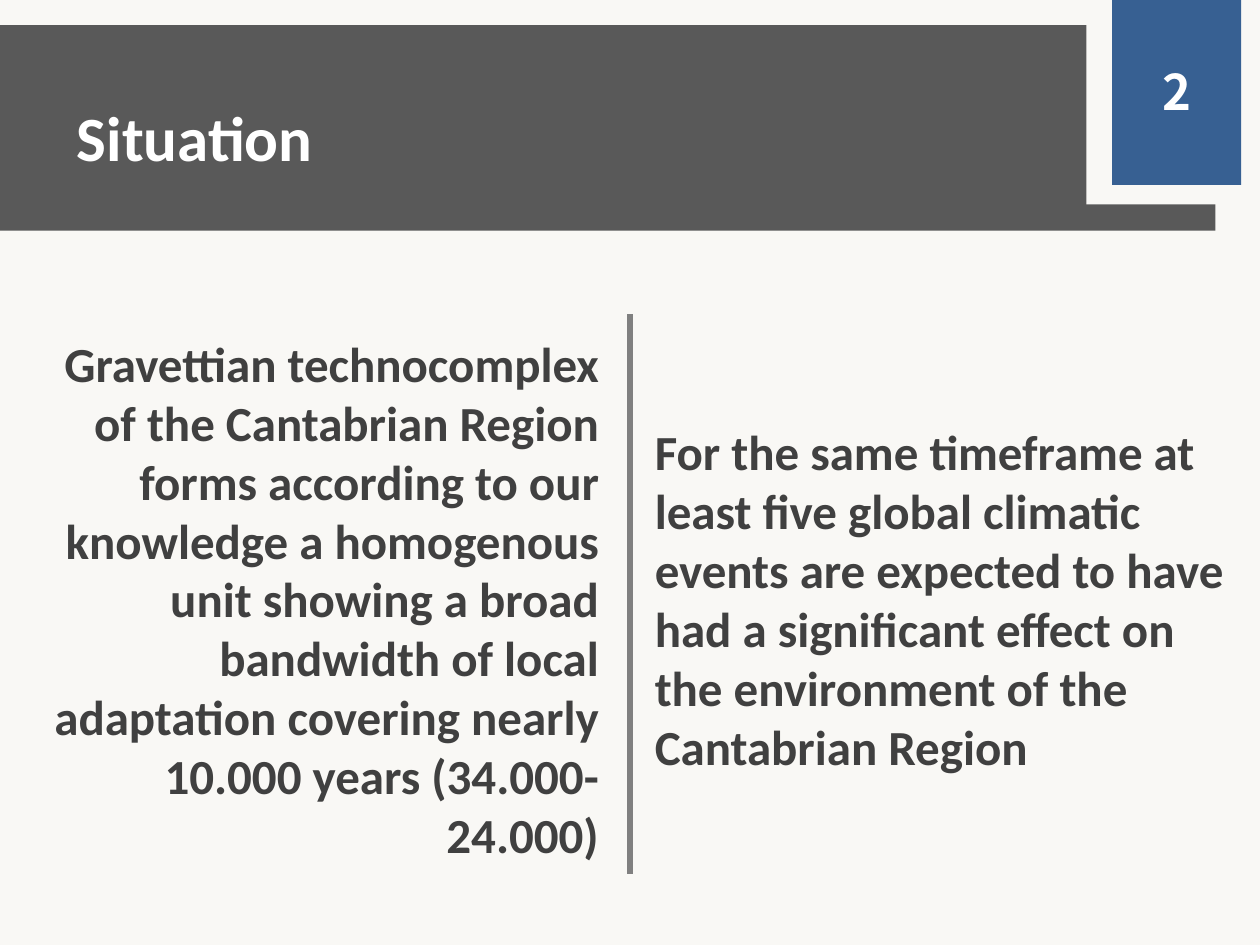
from lxml import etree
from pptx import Presentation
from pptx.dml.color import RGBColor
from pptx.enum.shapes import MSO_CONNECTOR, MSO_SHAPE
from pptx.enum.text import MSO_ANCHOR, PP_ALIGN
from pptx.oxml.ns import qn
from pptx.util import Cm, Pt

RECT = MSO_SHAPE.RECTANGLE
LINE = MSO_CONNECTOR.STRAIGHT
LEFT, MID, RIGHT = PP_ALIGN.LEFT, PP_ALIGN.CENTER, PP_ALIGN.RIGHT
TOP, CENTER = MSO_ANCHOR.TOP, MSO_ANCHOR.MIDDLE

PAPER, DARK, BLUE = "F9F8F5", "595959", "376092"
INK, GREY, WHITE = "404040", "808080", "FFFFFF"


def color(code):
    return RGBColor.from_string(code)


class Page:
    """Holds the text style and the current slide."""

    style = {"name": "Calibri", "size": Pt(28), "bold": True}

    def __init__(self, slide):
        self.shapes = slide.shapes

    def block(self, x, y, w, h, fill):
        shape = self.shapes.add_shape(RECT, Cm(x), Cm(y), Cm(w), Cm(h))
        shape.shadow.inherit = False
        shape.fill.solid()
        shape.fill.fore_color.rgb = color(fill)
        shape.line.fill.background()
        return shape

    def label(self, shape, text, ink, align=LEFT, anchor=TOP, **extra):
        frame = shape.text_frame
        frame.word_wrap = True
        frame.vertical_anchor = anchor
        par = frame.paragraphs[0]
        par.alignment = align
        run = par.add_run()
        run.text = text
        for key, value in {**self.style, **extra}.items():
            setattr(run.font, key, value)
        run.font.color.rgb = color(ink)

    def text(self, x, y, w, h, text, ink, **extra):
        box = self.shapes.add_textbox(Cm(x), Cm(y), Cm(w), Cm(h))
        self.label(box, text, ink, **extra)

    def rule(self, x, top, end, ink, width):
        line = self.shapes.add_connector(LINE, Cm(x), Cm(top), Cm(x), Cm(end))
        line.line.color.rgb = color(ink)
        line.line.width = Pt(width)
        etree.SubElement(line._element.spPr, qn("a:effectLst"))


def main():
    deck = Presentation()
    deck.slide_width, deck.slide_height = Cm(25.4), Cm(19.05)
    page = Page(deck.slides.add_slide(deck.slide_layouts[6]))

    # Background
    page.block(0, 0, 25.4, 19.13, PAPER)

    # Two statements with a rule between them
    page.text(0.71, 6.6, 11.61, 11.02,
              "Gravettian technocomplex of the Cantabrian Region forms "
              "according to our knowledge a homogenous unit showing a broad "
              "bandwidth of local adaptation covering nearly 10.000 years "
              "(34.000-24.000)", INK, align=RIGHT)
    page.text(12.95, 8.38, 12.17, 7.44,
              "For the same timeframe at least five global climatic events "
              "are expected to have had a significant effect on the "
              "environment of the Cantabrian Region", INK)
    page.rule(12.7, 6.33, 17.62, GREY, 3)

    # Title band
    page.block(0, 0.51, 24.5, 4.14, DARK)
    page.text(1.3, 0.71, 21.59, 4.09, "Situation", WHITE,
              anchor=CENTER, size=Pt(36))

    # Page number in its notch
    page.block(21.9, -0.08, 3.5, 4.2, PAPER)
    badge = page.block(22.42, -0.08, 2.6, 3.81, BLUE)
    page.label(badge, "2", WHITE, align=MID, anchor=CENTER,
               name="Noto Sans CJK SC")

    deck.save("out.pptx")


if __name__ == "__main__":
    main()
